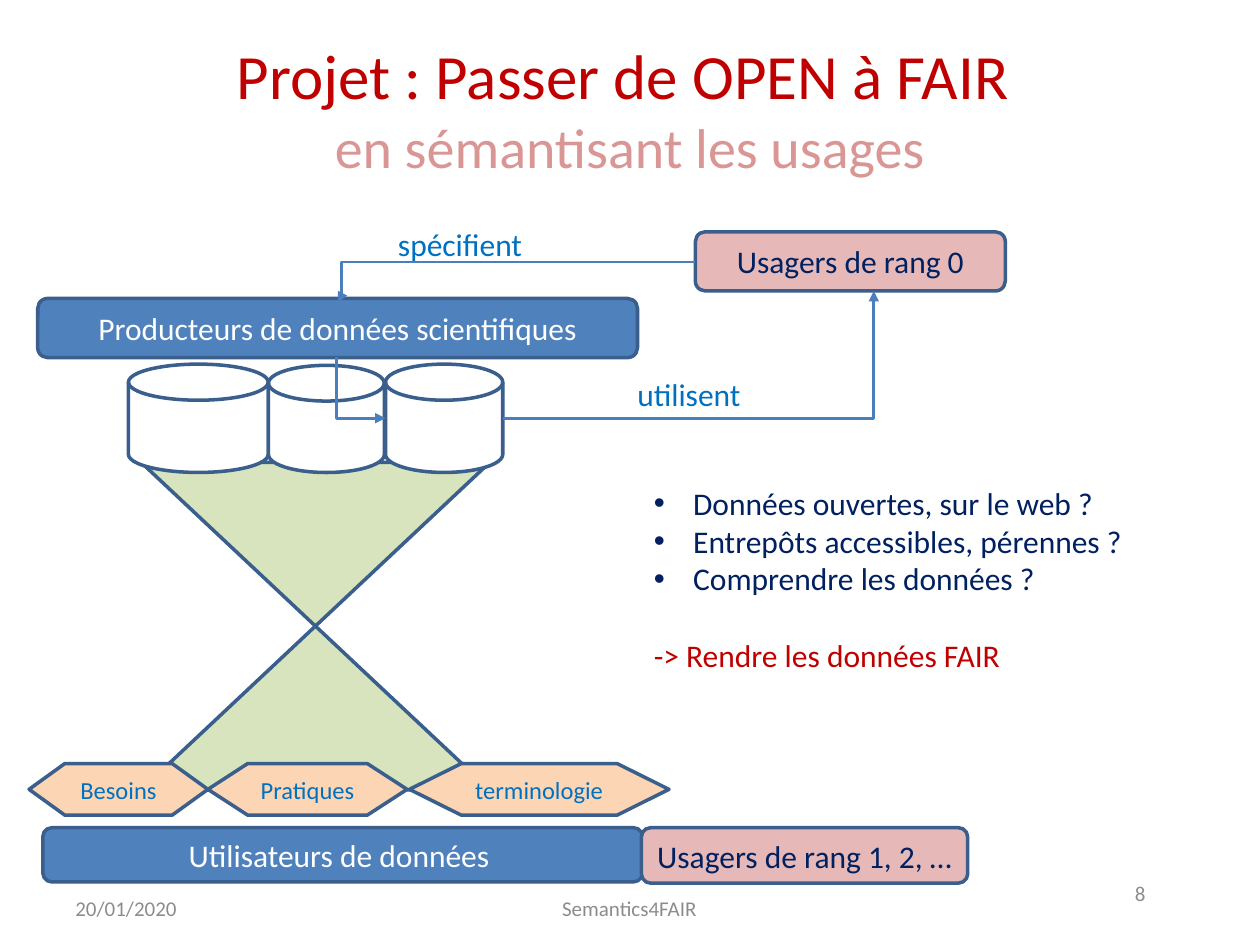
from dataclasses import dataclass

from lxml.etree import SubElement
from pptx import Presentation
from pptx.dml.color import RGBColor
from pptx.enum.shapes import MSO_CONNECTOR, MSO_SHAPE
from pptx.enum.text import MSO_ANCHOR, PP_ALIGN
from pptx.oxml.ns import qn
from pptx.util import Pt

FONT = "Calibri"
NAVY, RED, BLUE, WHITE, GREY = "002060", "C00000", "0070C0", "FFFFFF", "8C8C8C"
STEEL, PINK, PEACH, GREEN = "4F81BD", "E6B9B8", "FCD5B5", "D7E4BD"
OUTLINE, ARROW = "3A5F8C", "4B7EBC"


@dataclass
class Box:
    left: float
    top: float
    width: float
    height: float


@dataclass
class Node:
    kind: MSO_SHAPE
    box: Box
    fill: str
    text: str = ""
    color: str = WHITE
    size: float = 18


@dataclass
class Label:
    box: Box
    text: str
    color: str
    size: float = 18
    align: PP_ALIGN = PP_ALIGN.LEFT
    anchor: MSO_ANCHOR = MSO_ANCHOR.TOP


@dataclass
class Arrow:
    start: tuple[float, float]
    end: tuple[float, float]
    bend: float  # place of the vertical part, as a share of the width


def paint(target, color: str) -> None:
    """Give a fill, or the fill of a line, a solid colour."""
    target.solid()
    target.fore_color.rgb = RGBColor.from_string(color)


def set_font(font, size: float, color: str) -> None:
    font.name, font.size = FONT, Pt(size)
    font.color.rgb = RGBColor.from_string(color)


def place(box: Box) -> tuple:
    return Pt(box.left), Pt(box.top), Pt(box.width), Pt(box.height)


def write(frame, text: str, size: float, color: str, align: PP_ALIGN, anchor: MSO_ANCHOR) -> None:
    frame.word_wrap = True
    frame.vertical_anchor = anchor
    paragraph = frame.paragraphs[0]
    paragraph.text, paragraph.alignment = text, align
    set_font(paragraph.font, size, color)


def draw_node(slide, node: Node) -> None:
    shape = slide.shapes.add_shape(node.kind, *place(node.box))
    shape.shadow.inherit = False
    paint(shape.fill, node.fill)
    paint(shape.line.fill, OUTLINE)
    shape.line.width = Pt(2)
    if node.text:
        write(shape.text_frame, node.text, node.size, node.color, PP_ALIGN.CENTER, MSO_ANCHOR.MIDDLE)


def draw_label(slide, label: Label) -> None:
    frame = slide.shapes.add_textbox(*place(label.box)).text_frame
    write(frame, label.text, label.size, label.color, label.align, label.anchor)


def draw_arrow(slide, arrow: Arrow) -> None:
    points = [Pt(value) for value in (*arrow.start, *arrow.end)]
    connector = slide.shapes.add_connector(MSO_CONNECTOR.ELBOW, *points)
    paint(connector.line.fill, ARROW)
    connector.line.width = Pt(1.5)
    properties = connector._element.spPr
    guides = properties.find(qn("a:prstGeom")).find(qn("a:avLst"))
    SubElement(guides, qn("a:gd"), name="adj1", fmla=f"val {round(arrow.bend * 100000)}")
    SubElement(properties.find(qn("a:ln")), qn("a:tailEnd"), type="triangle")
    SubElement(properties, qn("a:effectLst"))


def draw_title(slide) -> None:
    frame = slide.shapes.add_textbox(*place(Box(36, 16.6, 648, 90))).text_frame
    frame.word_wrap = True
    frame.vertical_anchor = MSO_ANCHOR.MIDDLE
    paragraph = frame.paragraphs[0]
    paragraph.alignment = PP_ALIGN.CENTER
    lines = [("Projet : Passer de OPEN à FAIR ", 36, RED), ("en sémantisant les usages", 32, "D99694")]
    for index, (text, size, color) in enumerate(lines):
        if index:
            paragraph.add_line_break()
        run = paragraph.add_run()
        run.text = text
        set_font(run.font, size, color)


def draw_questions(slide, questions: list[str], conclusion: str) -> None:
    frame = slide.shapes.add_textbox(*place(Box(366.5, 272.9, 293.8, 116.6))).text_frame
    frame.word_wrap = True
    for index, text in enumerate([*questions, conclusion]):
        paragraph = frame.add_paragraph() if index else frame.paragraphs[0]
        paragraph.text = text
        if index < len(questions):
            set_font(paragraph.font, 18, NAVY)
            properties = paragraph._p.get_or_add_pPr()
            properties.set("marL", str(Pt(22.5)))
            properties.set("indent", str(-Pt(22.5)))
            bullet_font = SubElement(properties, qn("a:buFont"), typeface="Arial")
            bullet = SubElement(properties, qn("a:buChar"), char="•")
            run_defaults = properties.find(qn("a:defRPr"))
            run_defaults.addprevious(bullet_font)
            run_defaults.addprevious(bullet)
        else:
            set_font(paragraph.font, 18, RED)
            paragraph.space_before = Pt(22)


def main() -> None:
    presentation = Presentation()
    presentation.slide_width, presentation.slide_height = Pt(720), Pt(540)
    slide = presentation.slides.add_slide(presentation.slide_layouts[6])

    # Hourglass, title and footer
    draw_node(slide, Node(MSO_SHAPE.FLOWCHART_COLLATE, Box(80.6, 264.2, 199.4, 187.2), GREEN))
    draw_title(slide)
    for box, text, align in [
        (Box(36, 508.3, 167.8, 20.9), "20/01/2020", PP_ALIGN.LEFT),
        (Box(212.4, 508.3, 294.5, 20.9), "Semantics4FAIR", PP_ALIGN.CENTER),
        (Box(493.9, 496.1, 167.8, 28.8), "8", PP_ALIGN.RIGHT),
    ]:
        draw_label(slide, Label(box, text, GREY, 12, align, MSO_ANCHOR.MIDDLE))

    # Questions
    draw_questions(
        slide,
        ["Données ouvertes, sur le web ?", "Entrepôts accessibles, pérennes ?", "Comprendre les données ?"],
        "-> Rendre les données FAIR",
    )

    # Users and their needs
    bar = MSO_SHAPE.ROUNDED_RECTANGLE
    draw_node(slide, Node(bar, Box(24.5, 473, 342.7, 31), STEEL, "Utilisateurs de données "))
    for left, width, text in [(16.6, 102.2, "Besoins"), (118.8, 113.8, "Pratiques"), (234, 148.3, "terminologie")]:
        box = Box(left, 436.3, width, 29.5)
        draw_node(slide, Node(MSO_SHAPE.FLOWCHART_PREPARATION, box, PEACH, text, BLUE, 14))
    draw_node(slide, Node(bar, Box(366.5, 473, 186.5, 31.7), PINK, "Usagers de rang 1, 2, …", NAVY))

    # Producers and their data stores
    draw_node(slide, Node(bar, Box(21.6, 170.6, 342.7, 33.8), STEEL, "Producteurs de données scientifiques"))
    for box in [Box(220.3, 208.1, 67, 61.9), Box(73.4, 208.1, 79.9, 61.9), Box(153.4, 208.8, 66.2, 61.2)]:
        draw_node(slide, Node(MSO_SHAPE.FLOWCHART_MAGNETIC_DISK, box, WHITE))
    draw_node(slide, Node(bar, Box(397.4, 132.5, 177.1, 33.8), PINK, "Usagers de rang 0", NAVY))

    # Flows
    for arrow in [
        Arrow((192.2, 203.8), (220.3, 239), 0),
        Arrow((397.4, 149.8), (193, 172.8), 0.99),
        Arrow((287.3, 239), (499.3, 166.3), 1),
    ]:
        draw_arrow(slide, arrow)
    draw_label(slide, Label(Box(220.3, 125.3, 94.3, 28.8), "spécifient", BLUE))
    draw_label(slide, Label(Box(357.1, 211, 81.4, 28.8), "utilisent", BLUE))

    presentation.save("out.pptx")


if __name__ == "__main__":
    main()
